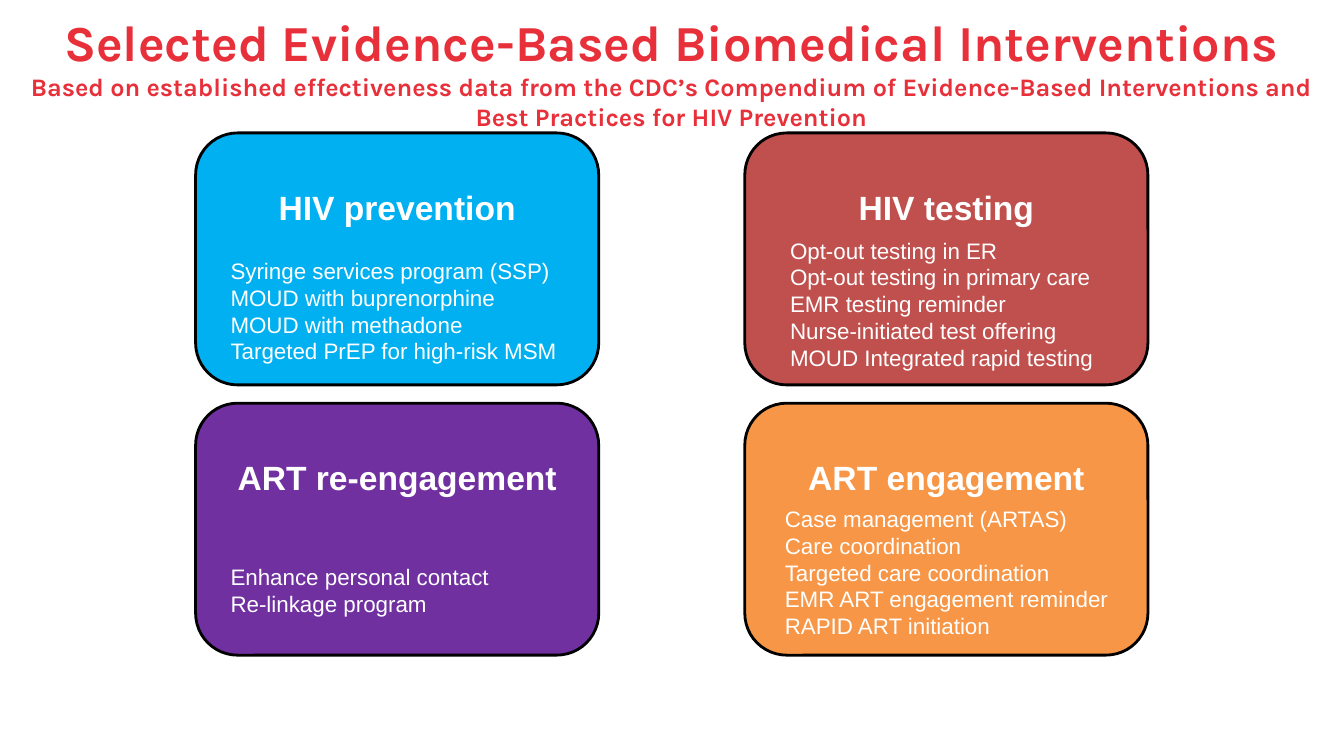
from pptx import Presentation
from pptx import util as u
from pptx.dml.color import RGBColor
from pptx.enum import shapes, text

CARD_WIDTH, CARD_HEIGHT = 10.16, 6.35
LEFT_COLUMN, RIGHT_COLUMN = 4.93, 18.77
TOP_ROW, BOTTOM_ROW = 3.35, 10.16

# heading, fill, card left, card top, list left, list top, list width, list items
CARDS = [
    ("HIV prevention", "00B0F0", LEFT_COLUMN, TOP_ROW, 5.56, 6.35, 8.89,
     ["Syringe services program (SSP)", "MOUD with buprenorphine",
      "MOUD with methadone", "Targeted PrEP for high-risk MSM"]),
    ("HIV testing", "C0504D", RIGHT_COLUMN, TOP_ROW, 19.66, 5.84, 8.64,
     ["Opt-out testing in ER", "Opt-out testing in primary care",
      "EMR testing reminder", "Nurse-initiated test offering",
      "MOUD Integrated rapid testing"]),
    ("ART re-engagement", "7030A0", LEFT_COLUMN, BOTTOM_ROW, 5.56, 14.07, 8.89,
     ["Enhance personal contact", "Re-linkage program"]),
    ("ART engagement", "F79646", RIGHT_COLUMN, BOTTOM_ROW, 19.53, 12.6, 8.89,
     ["Case management (ARTAS)", "Care coordination",
      "Targeted care coordination", "EMR ART engagement reminder",
      "RAPID ART initiation"]),
]


def color(value):
    return RGBColor.from_string(value)


def format_font(font, fill, **values):
    font.color.rgb = color(fill)
    for name, value in values.items():
        setattr(font, name, value)


presentation = Presentation()
presentation.slide_width = u.Cm(33.87)
presentation.slide_height = u.Cm(19.05)
slide = presentation.slides.add_slide(presentation.slide_layouts[5])

title = slide.shapes.title
title.left, title.top = u.Cm(0.46), u.Cm(0.38)
title.width, title.height = u.Cm(32.92), u.Cm(2.84)
title.text_frame.auto_size = text.MSO_AUTO_SIZE.NONE
title.text_frame.vertical_anchor = text.MSO_ANCHOR.MIDDLE
paragraph = title.text_frame.paragraphs[0]
paragraph.alignment = text.PP_ALIGN.CENTER
heading = paragraph.add_run()
heading.text = "Selected Evidence-Based Biomedical Interventions"
paragraph.add_line_break()
subtitle = paragraph.add_run()
subtitle.text = ("Based on established effectiveness data from the CDC’s Compendium of "
                 "Evidence-Based Interventions and Best Practices for HIV Prevention")
for run, size in ((heading, 36), (subtitle, 18)):
    format_font(run.font, "E8303B", name="Karla", size=u.Pt(size), bold=True)

for name, fill, left, top, list_left, list_top, list_width, items in CARDS:
    card = slide.shapes.add_shape(
        shapes.MSO_SHAPE.ROUNDED_RECTANGLE,
        u.Cm(left), u.Cm(top), u.Cm(CARD_WIDTH), u.Cm(CARD_HEIGHT))
    card.shadow.inherit = False
    card.fill.solid()
    card.fill.fore_color.rgb = color(fill)
    card.line.color.rgb = color("000000")
    card.line.width = u.Pt(2)
    card.text_frame.vertical_anchor = text.MSO_ANCHOR.TOP
    card.text_frame.margin_top = u.Cm(1.04)
    paragraph = card.text_frame.paragraphs[0]
    paragraph.text = name
    paragraph.alignment = text.PP_ALIGN.CENTER
    format_font(paragraph.font, "FFFFFF", name="Arial", size=u.Pt(24), bold=True)

    list_box = slide.shapes.add_textbox(
        u.Cm(list_left), u.Cm(list_top), u.Cm(list_width),
        u.Cm(0.26 + 0.68 * len(items)))
    list_box.text_frame.word_wrap = True
    list_box.text_frame.text = "\n".join(items)
    for paragraph in list_box.text_frame.paragraphs:
        format_font(paragraph.font, "FFFFFF", name="Arial", size=u.Pt(16))

presentation.save("out.pptx")
